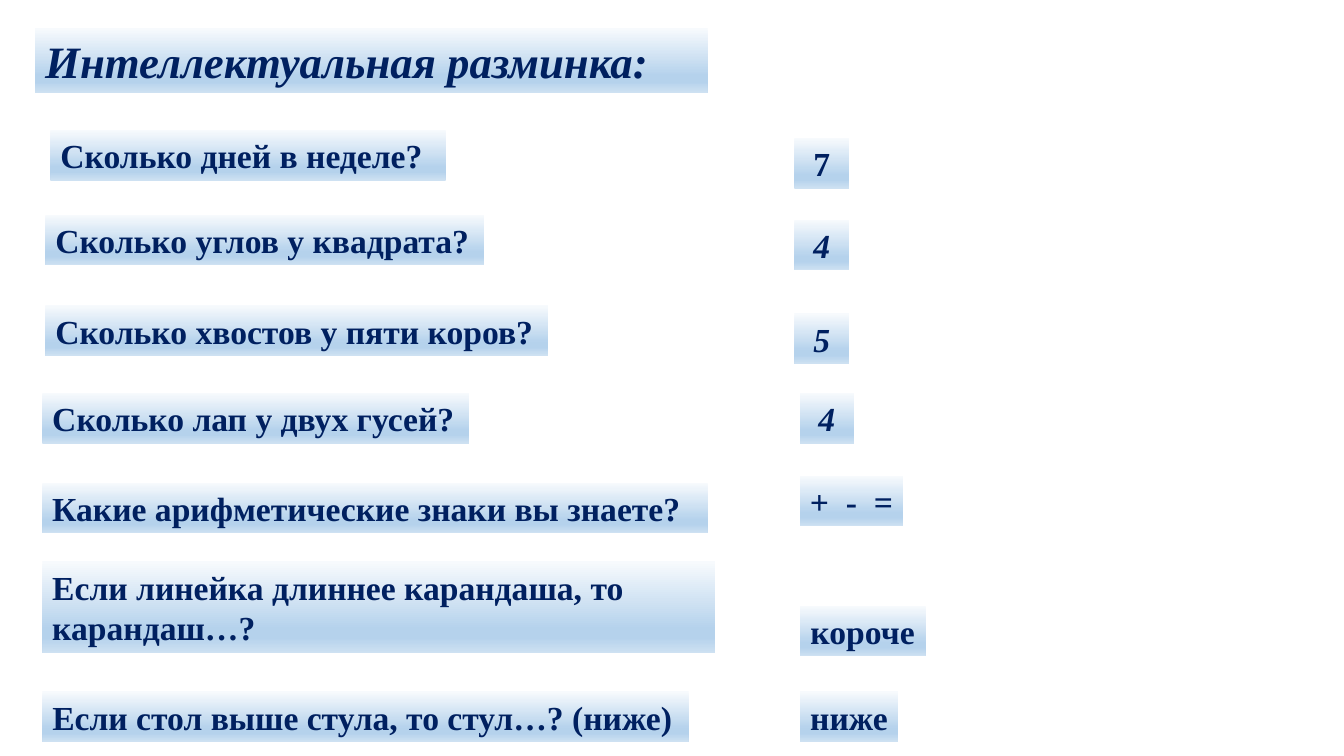
import pptx
import pptx.dml.color
import pptx.enum.shapes
import pptx.enum.text
import pptx.oxml.ns
import pptx.util
from lxml import etree

Inches = pptx.util.Inches
RGBColor = pptx.dml.color.RGBColor
ALIGN = pptx.enum.text.PP_ALIGN

NAVY = RGBColor(0x00, 0x20, 0x60)
PALE = RGBColor(0xF7, 0xFA, 0xFD)
SKY = RGBColor(0xB5, 0xD2, 0xEC)
MIST = RGBColor(0xCE, 0xE1, 0xF2)
GRADIENT = [(0, PALE), (74, SKY), (83, SKY), (100, MIST)]

FONT = "Times New Roman"
ROW_HEIGHT = 0.5

QUESTIONS = [
    ("Сколько дней в неделе?", 0.5, 1.29, 3.92, ROW_HEIGHT),
    ("Сколько углов у квадрата?", 0.45, 2.13, 4.35, ROW_HEIGHT),
    ("Сколько хвостов у пяти коров?", 0.45, 3.03, 4.99, ROW_HEIGHT),
    ("Сколько лап у двух гусей?", 0.42, 3.9, 4.23, ROW_HEIGHT),
    ("Какие арифметические знаки вы знаете?", 0.42, 4.79, 6.6, ROW_HEIGHT),
    ("Если линейка длиннее карандаша, то карандаш…?", 0.42, 5.57, 6.67, 0.91),
    ("Если стол выше стула, то стул…? (ниже)", 0.42, 6.86, 6.41, ROW_HEIGHT),
]
ANSWERS = [
    ("7", 7.88, 1.37, 0.54, False),
    ("4", 7.88, 2.18, 0.54, True),
    ("5", 7.88, 3.11, 0.54, True),
    ("4", 7.93, 3.9, 0.54, True),
    ("+  -  =", 7.93, 4.72, 1.03, False),
    ("короче", 7.93, 6.01, 1.25, False),
    ("ниже", 7.93, 6.86, 0.98, False),
]


def fill_gradient(sp):
    qn = pptx.oxml.ns.qn
    sp.fill.gradient()
    sp.fill.gradient_angle = 270
    stops = sp.element.spPr.find(qn("a:gradFill")).find(qn("a:gsLst"))
    for stop in list(stops):
        stops.remove(stop)
    for percent, color in GRADIENT:
        stop = etree.SubElement(stops, qn("a:gs"), pos=str(percent * 1000))
        etree.SubElement(stop, qn("a:srgbClr"), val=str(color))


def add_plate(slide, text, left, top, width, height,
              size=24, italic=False, align=ALIGN.LEFT, wrap=True):
    sp = slide.shapes.add_shape(
        pptx.enum.shapes.MSO_SHAPE.RECTANGLE,
        Inches(left), Inches(top), Inches(width), Inches(height))
    sp.shadow.inherit = False
    fill_gradient(sp)
    sp.line.fill.background()
    tf = sp.text_frame
    tf.word_wrap = wrap
    tf.vertical_anchor = pptx.enum.text.MSO_ANCHOR.MIDDLE
    p = tf.paragraphs[0]
    p.text = text
    p.alignment = align
    p.font.name = FONT
    p.font.size = pptx.util.Pt(size)
    p.font.bold = True
    p.font.italic = italic
    p.font.color.rgb = NAVY


def add_title(slide):
    add_plate(slide, "Интеллектуальная разминка:", 0.35, 0.28, 6.67, 0.64,
              size=32, italic=True)


def add_questions(slide):
    for text, left, top, width, height in QUESTIONS:
        add_plate(slide, text, left, top, width, height)


def add_answers(slide):
    for text, left, top, width, italic in ANSWERS:
        add_plate(slide, text, left, top, width, ROW_HEIGHT,
                  italic=italic, align=ALIGN.CENTER, wrap=False)


def main():
    prs = pptx.Presentation()
    prs.slide_width = Inches(13.33)
    prs.slide_height = Inches(7.5)
    slide = prs.slides.add_slide(prs.slide_layouts[6])
    add_title(slide)
    add_questions(slide)
    add_answers(slide)
    prs.save("out.pptx")


if __name__ == "__main__":
    main()
